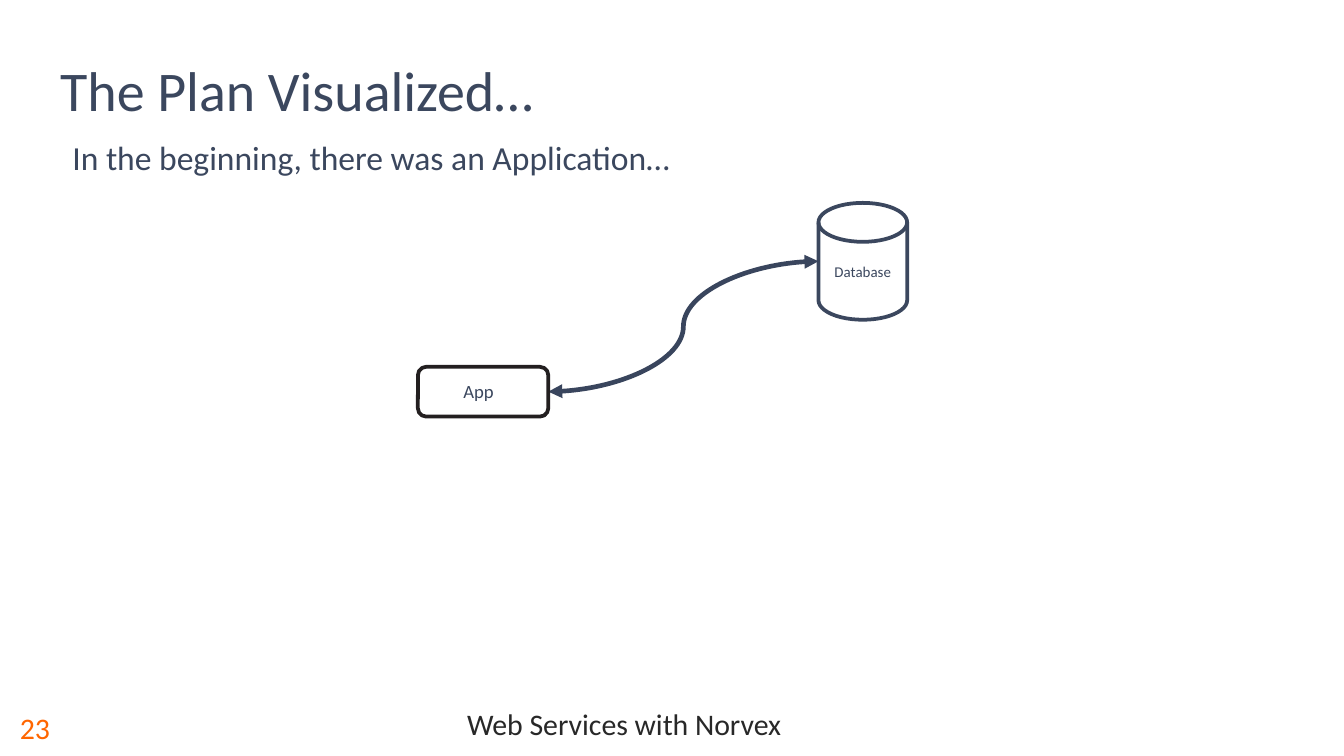
from dataclasses import dataclass

from lxml.etree import SubElement
from pptx import Presentation
from pptx.dml.color import RGBColor
from pptx.enum.shapes import MSO_CONNECTOR, MSO_SHAPE
from pptx.enum.text import MSO_ANCHOR, PP_ALIGN
from pptx.oxml.ns import qn
from pptx.util import Inches, Pt


@dataclass(frozen=True)
class Theme:
    font: str = "Calibri"
    navy: str = "3B475E"
    arrow: str = "39455D"
    black: str = "231F20"
    footer: str = "282828"
    orange: str = "FF6600"
    white: str = "FFFFFF"
    title: int = 30
    body: int = 18
    small: int = 16
    app: int = 10
    database: int = 8
    outline: float = 2
    link: float = 2.5


T = Theme()


@dataclass(frozen=True)
class Box:
    left: float
    top: float
    width: float
    height: float

    def inches(self) -> tuple:
        return tuple(Inches(v) for v in (self.left, self.top, self.width, self.height))


@dataclass(frozen=True)
class Label:
    text: str
    size: int
    color: str = T.navy
    align: PP_ALIGN = PP_ALIGN.LEFT
    anchor: MSO_ANCHOR = MSO_ANCHOR.MIDDLE
    spacing: float = 1.0


def write(sp, label: Label) -> None:
    tf = sp.text_frame
    tf.word_wrap = True
    tf.vertical_anchor = label.anchor
    p = tf.paragraphs[0]
    p.alignment = label.align
    p.line_spacing = label.spacing
    r = p.add_run()
    r.text = label.text
    r.font.name = T.font
    r.font.size = Pt(label.size)
    r.font.color.rgb = RGBColor.from_string(label.color)


def add_text(shapes, box: Box, label: Label) -> None:
    write(shapes.add_textbox(*box.inches()), label)


def add_node(shapes, kind: MSO_SHAPE, box: Box, line: str):
    sp = shapes.add_shape(kind, *box.inches())
    sp.shadow.inherit = False
    sp.fill.solid()
    sp.fill.fore_color.rgb = RGBColor.from_string(T.white)
    sp.line.color.rgb = RGBColor.from_string(line)
    sp.line.width = Pt(T.outline)
    return sp


def add_link(shapes, x1: float, y1: float, x2: float, y2: float) -> None:
    cn = shapes.add_connector(MSO_CONNECTOR.CURVE, Inches(x1), Inches(y1), Inches(x2), Inches(y2))
    cn.line.color.rgb = RGBColor.from_string(T.arrow)
    cn.line.width = Pt(T.link)
    ln = cn.line._get_or_add_ln()
    for end in ("a:headEnd", "a:tailEnd"):
        SubElement(ln, qn(end), type="triangle")
    SubElement(cn._element.spPr, qn("a:effectLst"))


def main() -> None:
    prs = Presentation()
    prs.slide_width, prs.slide_height = Inches(10), Inches(10 * 9 / 16)
    s = prs.slides.add_slide(prs.slide_layouts[6])

    # Footer and slide number
    add_text(s.shapes, Box(0.78, 5.19, 7.73, 0.44),
             Label("Web Services with Norvex", T.small, T.footer, PP_ALIGN.CENTER, spacing=0.8))
    add_text(s.shapes, Box(0.05, 5.19, 0.73, 0.44), Label("23", T.small, T.orange))

    # Title and lead sentence
    add_text(s.shapes, Box(0.35, 0.29, 7.66, 0.75), Label("The Plan Visualized…", T.title))
    add_text(s.shapes, Box(0.44, 0.97, 5.01, 0.4),
             Label("In the beginning, there was an Application…", T.body, anchor=MSO_ANCHOR.TOP))

    # Database
    db = Box(6.09, 1.51, 0.66, 0.87)
    sp = add_node(s.shapes, MSO_SHAPE.FLOWCHART_MAGNETIC_DISK, db, T.navy)
    sp.text_frame.margin_left = sp.text_frame.margin_right = 0
    write(sp, Label("Database", T.database, align=PP_ALIGN.CENTER))

    # Link from the application to the database
    app = Box(3.11, 2.73, 0.97, 0.37)
    add_link(s.shapes, app.left + app.width, app.top + app.height / 2,
             db.left, db.top + db.height / 2)

    # Application
    group = s.shapes.add_group_shape()
    add_node(group.shapes, MSO_SHAPE.ROUNDED_RECTANGLE, app, T.black)
    add_text(group.shapes, Box(3.35, 2.78, 0.49, 0.27),
             Label("App", T.app, anchor=MSO_ANCHOR.TOP))

    prs.save("out.pptx")


if __name__ == "__main__":
    main()
